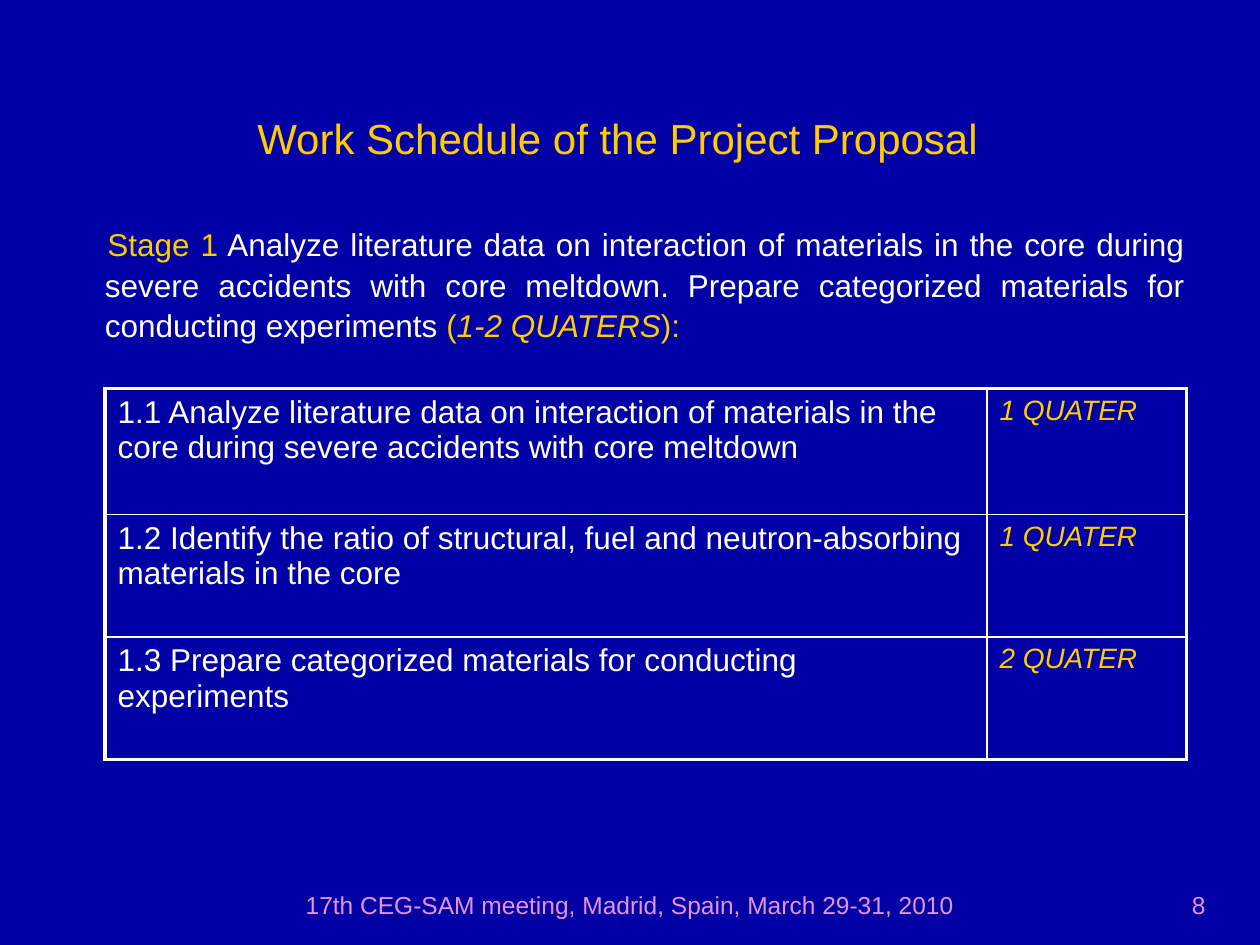
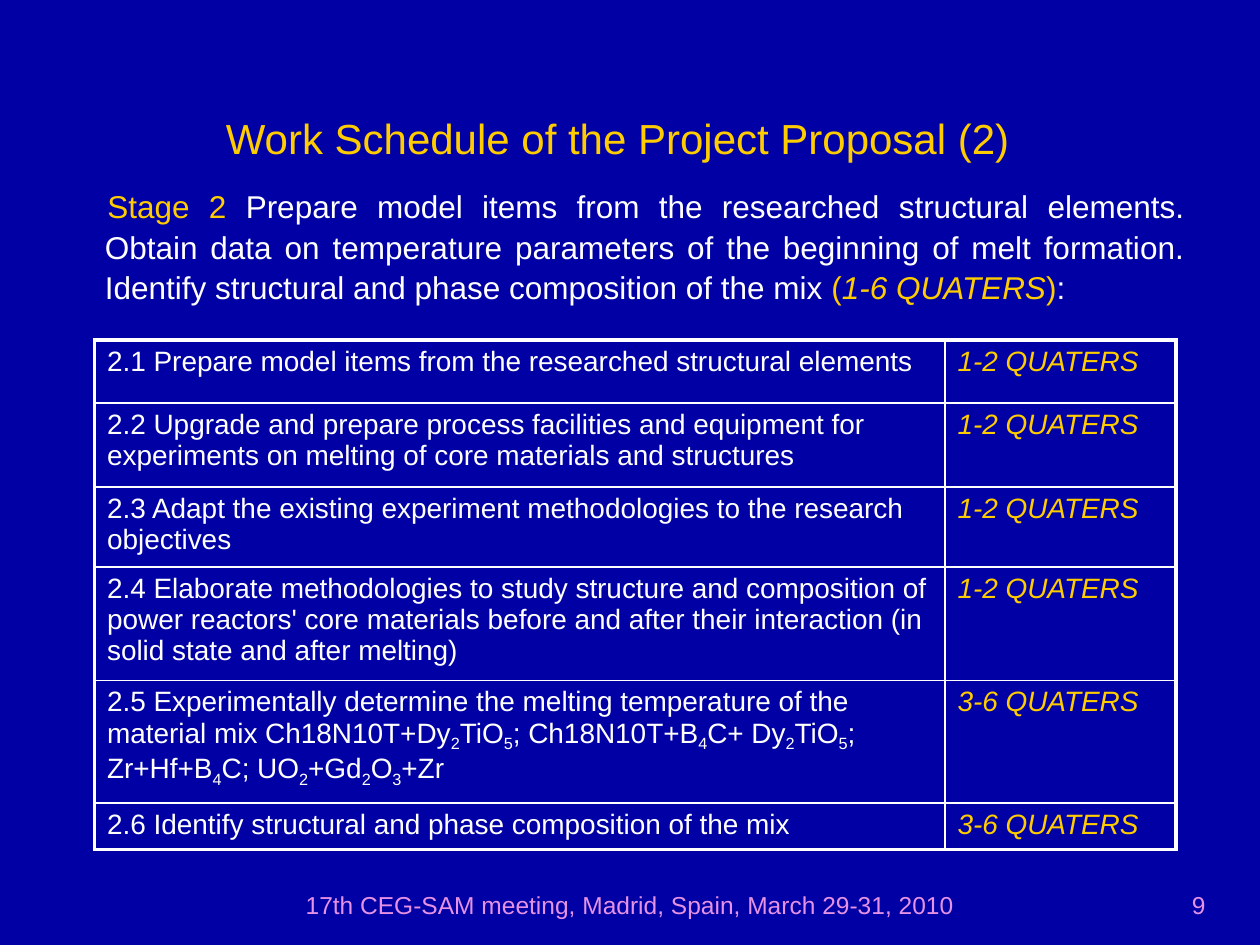
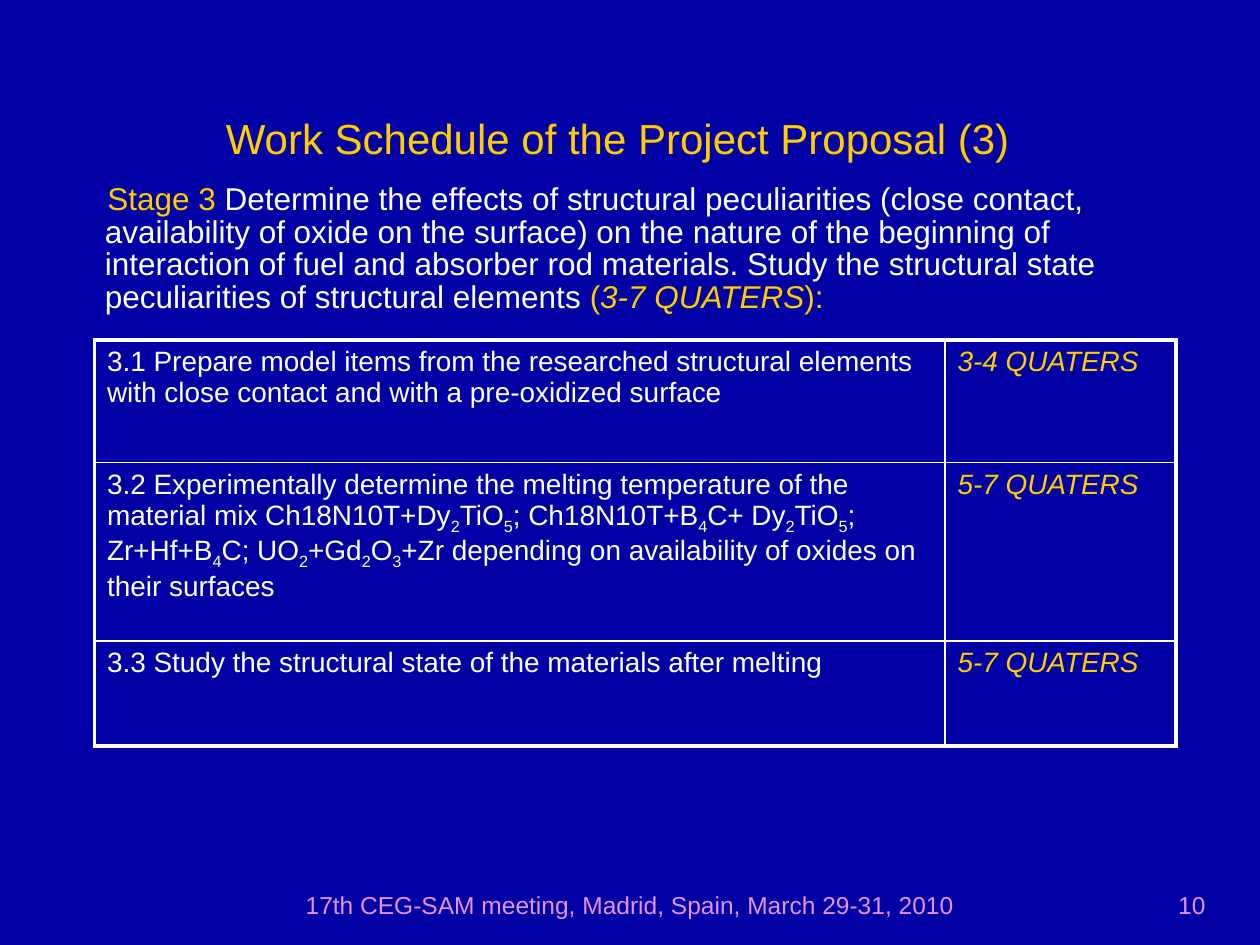
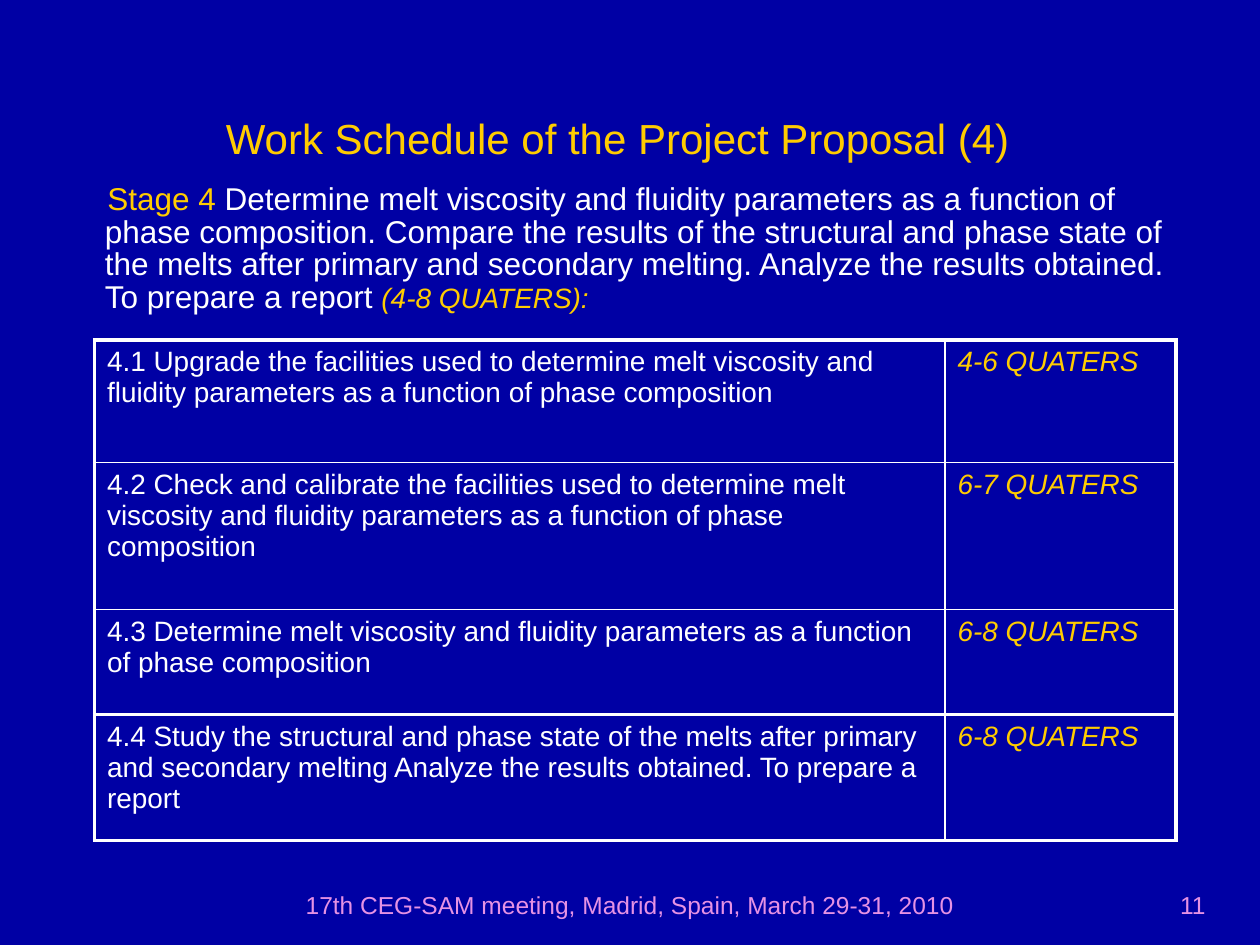
import pptx
import pptx.dml.color
import pptx.enum.text
import pptx.oxml.ns
import pptx.util
from lxml import etree

Pt = pptx.util.Pt
RGBColor = pptx.dml.color.RGBColor
ALIGN = pptx.enum.text.PP_ALIGN
ANCHOR = pptx.enum.text.MSO_ANCHOR

NAVY = RGBColor(0x00, 0x00, 0xA4)
WHITE = RGBColor(0xFF, 0xFF, 0xFF)
GOLD = RGBColor(0xFF, 0xCC, 0x00)
PINK = RGBColor(0xE6, 0x92, 0xE4)

FONT = "Arial"
TITLE = "Work Schedule of the Project Proposal"
FOOTER = "17th CEG-SAM meeting, Madrid, Spain, March 29-31, 2010"
FIRST_PAGE = 8
OUTER_LINE, INNER_LINE = 2.25, 1
# An underscore puts the next character below the line.
MIX = ("Experimentally determine the melting temperature of the material mix "
       "Ch18N10T+Dy_2TiO_5; Ch18N10T+B_4C+ Dy_2TiO_5; Zr+Hf+B_4C; UO_2+Gd_2O_3+Zr")

STAGES = [
    dict(
        intro=[
            ("Stage 1", GOLD),
            (" Analyze literature data on interaction of materials in the core during severe "
             "accidents with core meltdown. Prepare categorized materials for conducting "
             "experiments ", WHITE),
            ("(", GOLD), ("1-2 QUATERS", GOLD, True), ("):", GOLD)],
        intro_top=108, intro_inset=19.2, alignment=ALIGN.JUSTIFY, line_spacing=1.07,
        table_at=(60, 222), columns=(504, 114), task_size=18,
        rows=[
            (72, "1.1 Analyze literature data on interaction of materials in the core during "
                 "severe accidents with core meltdown", "1 QUATER"),
            (70, "1.2 Identify the ratio of structural, fuel and neutron-absorbing materials "
                 "in the core", "1 QUATER"),
            (70, "1.3 Prepare categorized materials for conducting experiments", "2 QUATER")]),
    dict(
        intro=[
            ("Stage 2", GOLD),
            (" Prepare model items from the researched structural elements. Obtain data on "
             "temperature parameters of the beginning of melt formation. Identify structural "
             "and phase composition of the mix ", WHITE),
            ("(", GOLD), ("1-6 QUATERS", GOLD, True), (")", GOLD), (":", WHITE)],
        alignment=ALIGN.JUSTIFY, line_spacing=1.07,
        rows=[
            (36, "2.1 Prepare model items from the researched structural elements",
             "1-2 QUATERS"),
            (48, "2.2 Upgrade and prepare process facilities and equipment for experiments on "
                 "melting of core materials and structures", "1-2 QUATERS"),
            (42.5, "2.3 Adapt the existing experiment methodologies to the research objectives",
             "1-2 QUATERS"),
            (60, "2.4 Elaborate methodologies to study structure and composition of power "
                 "reactors' core materials before and after their interaction (in solid state "
                 "and after melting)", "1-2 QUATERS"),
            (65.5, "2.5 " + MIX, "3-6 QUATERS"),
            (25, "2.6 Identify structural and phase composition of the mix", "3-6 QUATERS")]),
    dict(
        intro=[
            ("Stage 3 ", GOLD),
            ("Determine the effects of structural peculiarities (close contact, availability of "
             "oxide on the surface) on the nature of the beginning of interaction of fuel and "
             "absorber rod materials. Study the structural state peculiarities of structural "
             "elements ", WHITE),
            ("(", GOLD), ("3-7 QUATERS", GOLD, True), ("):", GOLD)],
        rows=[
            (70, "3.1 Prepare model items from the researched structural elements with close "
                 "contact and with a pre-oxidized surface", "3-4 QUATERS"),
            (102, "3.2 " + MIX + " depending on availability of oxides on their surfaces",
             "5-7 QUATERS"),
            (60, "3.3 Study the structural state of the materials after melting",
             "5-7 QUATERS")]),
    dict(
        intro=[
            ("Stage 4", GOLD),
            (" Determine melt viscosity and fluidity parameters as a function of phase "
             "composition. Compare the results of the structural and phase state of the melts "
             "after primary and secondary melting. Analyze the results obtained. To prepare a "
             "report ", WHITE),
            ("(4-8 QUATERS):", GOLD, True, 16)],
        heavy_line_above=3,
        rows=[
            (70, "4.1 Upgrade the facilities used to determine melt viscosity and fluidity "
                 "parameters as a function of phase composition", "4-6 QUATERS"),
            (84, "4.2 Check and calibrate the facilities used to determine melt viscosity and "
                 "fluidity parameters as a function of phase composition", "6-7 QUATERS"),
            (60, "4.3 Determine melt viscosity and fluidity parameters as a function of phase "
                 "composition", "6-8 QUATERS"),
            (72, "4.4 Study the structural and phase state of the melts after primary and "
                 "secondary melting Analyze the results obtained. To prepare a report",
             "6-8 QUATERS")]),
]


class Deck:
    def __init__(self):
        self.presentation = pptx.Presentation()
        self.presentation.slide_width = Pt(720)
        self.presentation.slide_height = Pt(540)
        fill = self.presentation.slide_master.background.fill
        fill.solid()
        fill.fore_color.rgb = NAVY
        self.slide = None

    def format_run(self, run, size, color, italic=False):
        run.font.name = FONT
        run.font.size = Pt(size)
        run.font.color.rgb = color
        run.font.italic = italic

    def set_text(self, paragraph, text, size, color, italic=False):
        paragraph.text = text
        self.format_run(paragraph.runs[0], size, color, italic)

    def set_formula(self, paragraph, text, size, color):
        """Set text in which an underscore lowers the next character."""
        start, *rest = text.split("_")
        self.set_text(paragraph, start, size, color)
        for part in rest:
            for piece, baseline in ((part[0], "-25000"), (part[1:], "0")):
                run = paragraph.add_run()
                run.text = piece
                self.format_run(run, size, color)
                run._r.get_or_add_rPr().set("baseline", baseline)

    def add_slide(self, title, page):
        self.slide = self.presentation.slides.add_slide(self.presentation.slide_layouts[5])
        self.title(title)
        self.footer(FOOTER, 144, 432, ALIGN.CENTER)
        self.footer(str(page), 516, 180, ALIGN.RIGHT)

    def title(self, text):
        shape = self.slide.shapes.title
        shape.left, shape.top, shape.width, shape.height = Pt(24), Pt(18), Pt(670), Pt(104.4)
        frame = shape.text_frame
        frame.vertical_anchor = ANCHOR.MIDDLE
        frame.margin_top = Pt(20)
        frame.margin_right = Pt(19.4)
        paragraph = frame.paragraphs[0]
        self.set_text(paragraph, text, 24, GOLD)
        paragraph.alignment = ALIGN.CENTER

    def text_box(self, left, top, width, height):
        frame = self.slide.shapes.add_textbox(
            Pt(left), Pt(top), Pt(width), Pt(height)).text_frame
        frame.word_wrap = True
        return frame

    def footer(self, text, left, width, alignment):
        frame = self.text_box(left, 492, width, 37.2)
        frame.vertical_anchor = ANCHOR.BOTTOM
        paragraph = frame.paragraphs[0]
        self.set_text(paragraph, text, 14, PINK)
        paragraph.alignment = alignment

    def intro(self, segments, top, inset, alignment, line_spacing):
        frame = self.text_box(24, top, 660, 84)
        frame.margin_top = Pt(inset)
        paragraph = frame.paragraphs[0]
        paragraph.alignment = alignment
        paragraph.line_spacing = line_spacing
        properties = paragraph._p.get_or_add_pPr()
        properties.set("marL", str(Pt(28.8)))
        properties.set("indent", str(Pt(1.44)))
        for text, color, *style in segments:
            italic, size = style + [False, 18][len(style):]
            run = paragraph.add_run()
            run.text = text
            self.format_run(run, size, color, italic)

    def border(self, cell, side, width):
        properties = cell._tc.get_or_add_tcPr()
        line = etree.SubElement(properties, pptx.oxml.ns.qn("a:ln" + side), w=str(Pt(width)))
        fill = etree.SubElement(line, pptx.oxml.ns.qn("a:solidFill"))
        etree.SubElement(fill, pptx.oxml.ns.qn("a:srgbClr"), val=str(WHITE))

    def schedule(self, rows, position, columns, task_size, heavy_line_above):
        left, top = position
        table = self.slide.shapes.add_table(
            len(rows), 2, Pt(left), Pt(top), Pt(sum(columns)),
            Pt(sum(row[0] for row in rows))).table
        table.first_row = table.horz_banding = False
        for column, width in zip(table.columns, columns):
            column.width = Pt(width)
        heavy_lines = {0, len(rows), heavy_line_above}
        for index, (height, task, quarters) in enumerate(rows):
            table.rows[index].height = Pt(height)
            task_cell, quarters_cell = table.cell(index, 0), table.cell(index, 1)
            self.set_formula(task_cell.text_frame.paragraphs[0], task, task_size, WHITE)
            self.set_text(quarters_cell.text_frame.paragraphs[0], quarters, 16, GOLD, True)
            above, below = (OUTER_LINE if line in heavy_lines else INNER_LINE
                            for line in (index, index + 1))
            for cell, before, after in ((task_cell, OUTER_LINE, INNER_LINE),
                                        (quarters_cell, INNER_LINE, OUTER_LINE)):
                for side, width in zip("LRTB", (before, after, above, below)):
                    self.border(cell, side, width)
                cell.fill.background()

    def stage(self, intro, rows, intro_top=102, intro_inset=3.6, alignment=ALIGN.LEFT,
              line_spacing=0.86, table_at=(54, 194.4), columns=(486, 132), task_size=16,
              heavy_line_above=None):
        self.intro(intro, intro_top, intro_inset, alignment, line_spacing)
        self.schedule(rows, table_at, columns, task_size, heavy_line_above)


def main():
    deck = Deck()
    for number, stage in enumerate(STAGES, start=1):
        title = TITLE if number == 1 else f"{TITLE} ({number})"
        deck.add_slide(title, FIRST_PAGE + number - 1)
        deck.stage(**stage)
    deck.presentation.save("out.pptx")


if __name__ == "__main__":
    main()
